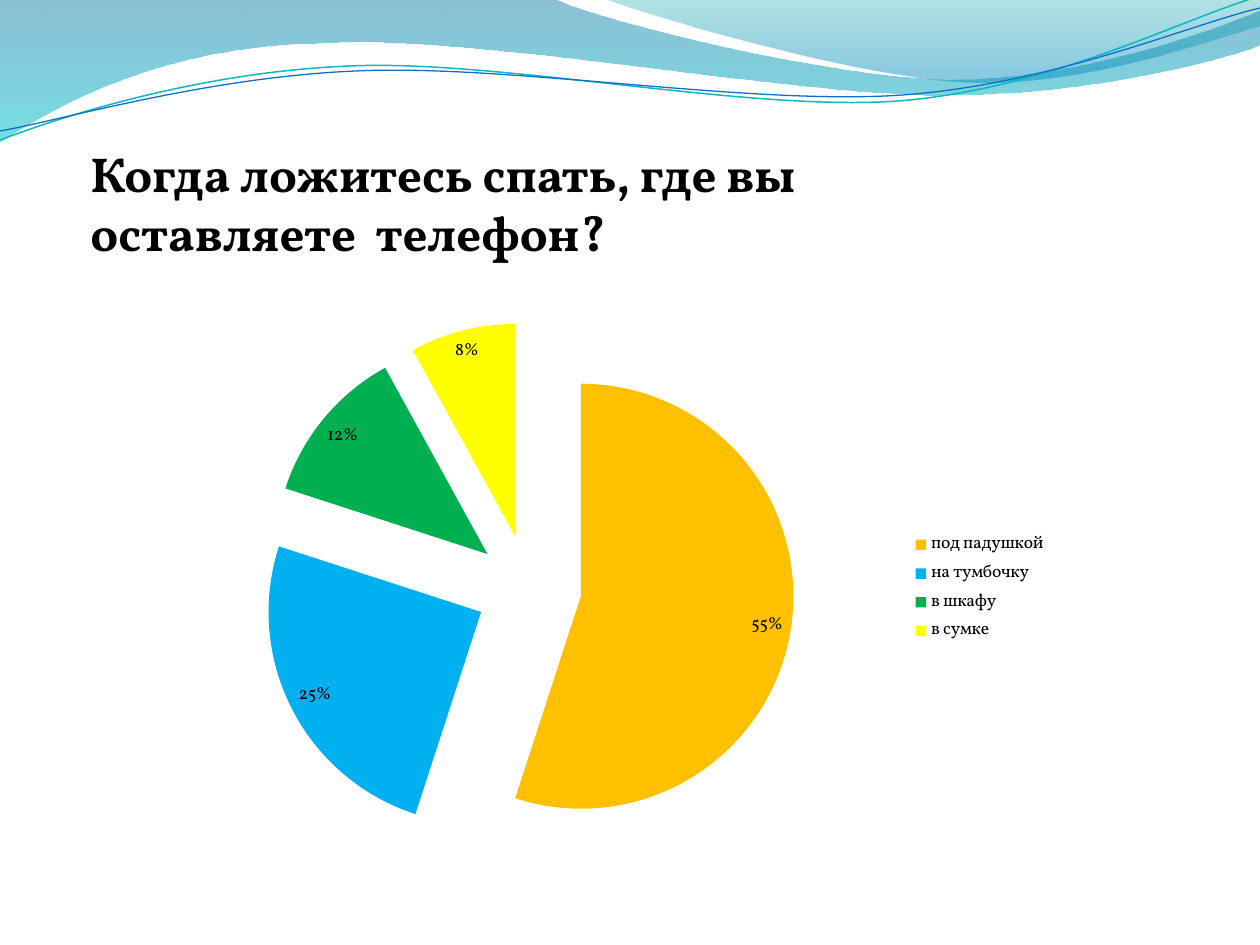
"""Builds a survey slide: wave header, question and exploded pie chart of answers."""
from itertools import chain

from lxml import etree
from pptx import Presentation
from pptx import util as u
from pptx.chart import data as chart_data
from pptx.dml.color import RGBColor
from pptx.enum import chart as ch
from pptx.oxml import ns

PX = 914400 / 126
FONT = "Vollkorn"


def rgb(value):
    return RGBColor.from_string(value)


def add_outline(shape_tree, start, segments, close):
    """Draws segments of one point (line) or three points (cubic curve)."""
    builder = shape_tree.build_freeform(*start, scale=PX)
    builder.add_line_segments(list(chain.from_iterable(segments)), close=close)
    outline = builder.convert_to_shape()
    outline.shadow.inherit = False
    lines = iter(list(outline._element.iter(ns.qn("a:lnTo"))))
    for segment in segments:
        first, *others = [next(lines) for point in segment]
        if others:
            first.tag = ns.qn("a:cubicBezTo")
            for other in others:
                first.append(other[0])
                other.getparent().remove(other)
    return outline


prs = Presentation()
prs.slide_width, prs.slide_height = u.Inches(10), u.Inches(7.5)
slide = prs.slides.add_slide(prs.slide_layouts[6])

waves = [
    ((0, 0), [[(554, -1)],
              [(600, 21), (837, 79), (955, 79)],
              [(1075, 79), (1207, 33), (1260, 11)],
              [(1261, 45)],
              [(1239, 55), (1096, 96), (940, 95)],
              [(784, 95), (481, 35), (324, 43)],
              [(163, 45), (58, 105), (-1, 142)]],
     [("0074A1", 0, 45), ("00C6CF", 100, 55)]),
    ((604, -1), [[(641, 14), (859, 78), (969, 82)],
                 [(1079, 87), (1211, 40), (1260, 26)],
                 [(1260, 0)]],
     [("00A1A9", 0, 30), ("008BBF", 80, 45)]),
]
for start, segments, stops in waves:
    wave = add_outline(slide.shapes, start, segments, True)
    wave.line.fill.background()
    wave.fill.gradient()
    gradient = wave.fill._xPr.find(ns.qn("a:gradFill"))
    gradient.find(ns.qn("a:lin")).set("ang", "5400000")
    stop_list = gradient.find(ns.qn("a:gsLst"))
    for old_stop in list(stop_list):
        stop_list.remove(old_stop)
    for color, position, opacity in stops:
        stop = etree.SubElement(stop_list, ns.qn("a:gs"), pos=str(position * 1000))
        shade = etree.SubElement(stop, ns.qn("a:srgbClr"), val=color)
        etree.SubElement(shade, ns.qn("a:alpha"), val=str(opacity * 1000))

ribbons = [
    ((0, 140), [[(60, 117), (199, 72), (349, 66)],
                [(498, 59), (747, 112), (898, 101)],
                [(1050, 89), (1182, 19), (1257, -3)]], "0AB8BF", 0.85),
    ((0, 131), [[(59, 121), (207, 77), (357, 71)],
                [(508, 64), (752, 106), (903, 95)],
                [(1053, 84), (1186, 26), (1260, 8)]], "0F6FC6", 0.75),
]
for start, segments, color, width in ribbons:
    ribbon = add_outline(slide.shapes, start, segments, False)
    ribbon.fill.background()
    ribbon.line.color.rgb = rgb(color)
    ribbon.line.width = u.Pt(width)

answers = [("под падушкой ", 55, "FFC000"), ("на тумбочку ", 25, "00B0F0"),
           ("в шкафу ", 12, "00B050"), ("в сумке ", 8, "FFFF00")]
survey = chart_data.CategoryChartData()
survey.categories = [answer for answer, share, color in answers]
survey.add_series("Series 1", [share for answer, share, color in answers])
pie = slide.shapes.add_chart(ch.XL_CHART_TYPE.PIE, *(round(n * PX) for n in (147, 305, 916, 566)),
                             survey).chart
pie.has_title = False
pie.font.name, pie.font.size = FONT, u.Pt(10)
pie.font.color.rgb = rgb("000000")
pie.has_legend = True
pie.legend.position = ch.XL_LEGEND_POSITION.RIGHT
pie.legend.include_in_layout = False

plot = pie.plots[0]
plot.vary_by_categories = True
plot.has_data_labels = True
labels = plot.data_labels
labels.show_percentage, labels.show_value = True, False
labels.number_format, labels.number_format_is_linked = "0%", False
labels.position = ch.XL_LABEL_POSITION.BEST_FIT

shares = plot.series[0]
for index, (answer, share, color) in enumerate(answers):
    slice_fill = shares.points[index].format.fill
    slice_fill.solid()
    slice_fill.fore_color.rgb = rgb(color)
explosion = etree.Element(ns.qn("c:explosion"), val="25")
shares._element.find(ns.qn("c:dPt")).addprevious(explosion)

question = slide.shapes.add_textbox(*(round(n * PX) for n in (78, 137, 992, 131))).text_frame
question.word_wrap = True
question.text = "Когда ложитесь спать, где вы оставляете  телефон?"
question_font = question.paragraphs[0].runs[0].font
question_font.name, question_font.size, question_font.bold = FONT, u.Pt(28), True
question_font.color.rgb = rgb("000000")

prs.save("out.pptx")
